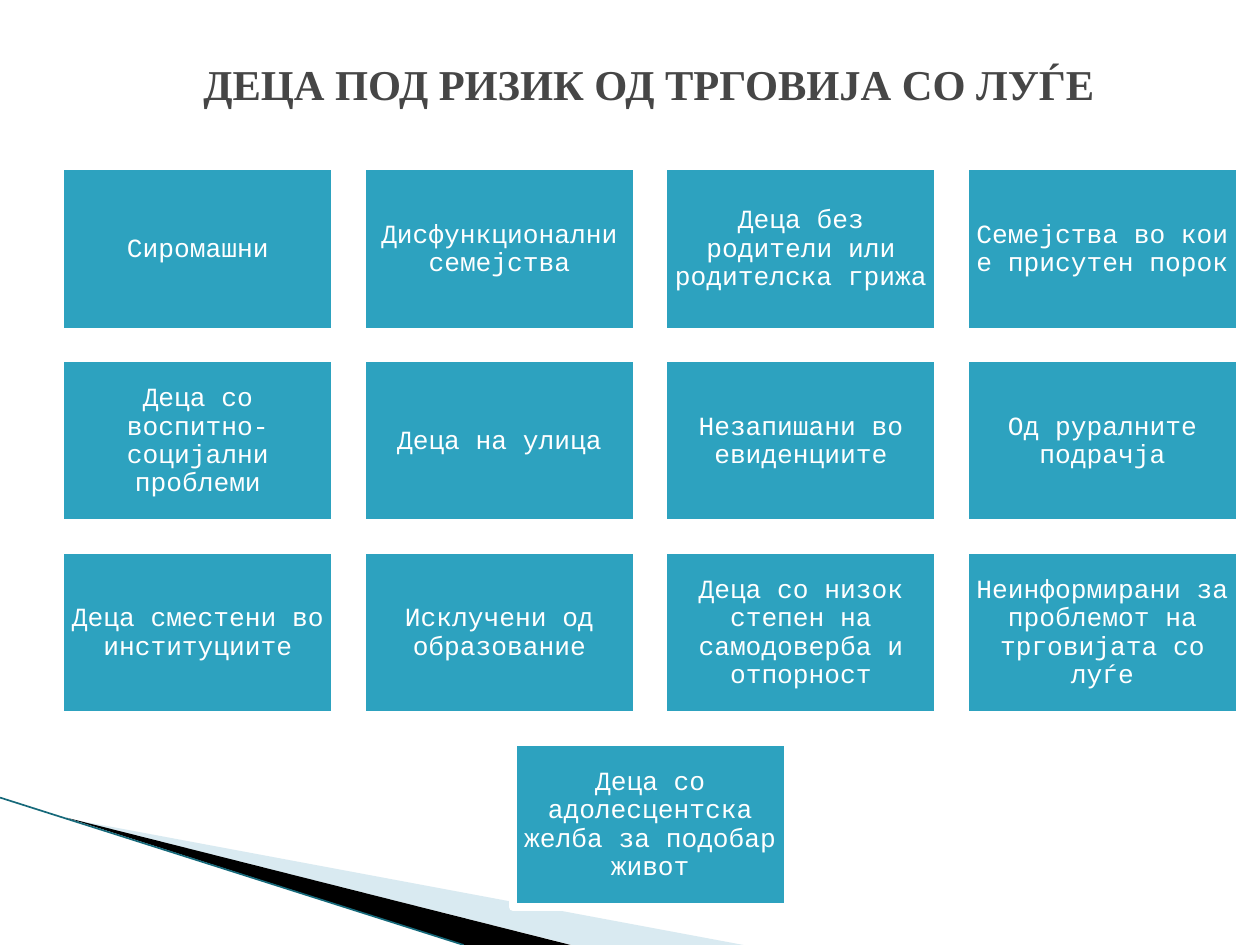
from pptx import Presentation
from pptx.dml.color import RGBColor
from pptx.enum import shapes, text
from pptx.oxml.ns import qn
from pptx.util import Inches, Pt
from lxml import etree

TITLE = "ДЕЦА ПОД РИЗИК ОД ТРГОВИЈА СО ЛУЃЕ"
RISK_ROWS = [
    ["Сиромашни", "Дисфункционални семејства",
     "Деца без родители или родителска грижа",
     "Семејства во кои е присутен порок"],
    ["Деца со воспитно-социјални проблеми", "Деца на улица",
     "Незапишани во евиденциите", "Од руралните подрачја"],
    ["Деца сместени во институциите", "Исклучени од образование",
     "Деца со низок степен на самодоверба и отпорност",
     "Неинформирани за проблемот на трговијата со луѓе"],
    ["Деца со адолесцентска желба за подобар живот"],
]

WHITE = RGBColor(0xFF, 0xFF, 0xFF)
BLACK = RGBColor(0, 0, 0)
GRAY = RGBColor(0x46, 0x46, 0x46)
TEAL = RGBColor(0x2D, 0xA2, 0xBF)
DARK_TEAL = RGBColor(0x16, 0x69, 0x7A)
PALE_BLUE = RGBColor(0xA0, 0xCB, 0xDC)

# Corner wedges: points in inches, fill colour, opacity in percent
WEDGES = [
    ([(0.55, 6.5), (5.9, 7.5), (4.54, 7.5)], PALE_BLUE, 40),
    ([(0.53, 6.49), (4.53, 7.5), (3.68, 7.5)], BLACK, 100),
]
EDGE = [(0, 6.33), (3.68, 7.5)]

GRID_CENTER, GRID_TOP = 5.16, 1.32
BOX_WIDTH, BOX_HEIGHT = 2.18, 1.31
STEP_X, STEP_Y = 2.393, 1.523


def format_with(target, values):
    for name, value in values.items():
        setattr(target, name, value)


def add_wedge(page, points, color, opacity):
    corners = [(Inches(x), Inches(y)) for x, y in points]
    builder = page.shapes.build_freeform(*corners[0])
    builder.add_line_segments(corners[1:], close=True)
    wedge = builder.convert_to_shape()
    wedge.shadow.inherit = False
    wedge.fill.solid()
    wedge.fill.fore_color.rgb = color
    wedge.line.fill.background()
    if opacity < 100:
        fill_color = wedge._element.spPr.find(".//" + qn("a:srgbClr"))
        etree.SubElement(fill_color, qn("a:alpha"), val=str(opacity * 1000))


def add_edge(page):
    ends = [Inches(value) for point in EDGE for value in point]
    edge = page.shapes.add_connector(shapes.MSO_CONNECTOR.STRAIGHT, *ends)
    edge.line.color.rgb = DARK_TEAL
    edge.line.width = Pt(0.95)
    etree.SubElement(edge._element.spPr, qn("a:effectLst"))


def write(frame, wording, frame_format, para_format, font_format, color):
    format_with(frame, frame_format)
    frame.text = wording
    para = frame.paragraphs[0]
    format_with(para, para_format)
    format_with(para.font, font_format)
    para.font.color.rgb = color


def add_risk(page, wording, left, top):
    box = page.shapes.add_shape(
        shapes.MSO_SHAPE.RECTANGLE, Inches(left), Inches(top),
        Inches(BOX_WIDTH), Inches(BOX_HEIGHT))
    box.shadow.inherit = False
    box.fill.solid()
    box.fill.fore_color.rgb = TEAL
    box.line.color.rgb = WHITE
    box.line.width = Pt(4.33)
    margins = dict.fromkeys(
        ["margin_left", "margin_top", "margin_right", "margin_bottom"],
        Inches(0.06))
    write(box.text_frame, wording,
          {"word_wrap": True, "vertical_anchor": text.MSO_ANCHOR.MIDDLE,
           **margins},
          {"alignment": text.PP_ALIGN.CENTER, "line_spacing": 0.9},
          {"name": "Courier New", "size": Pt(15)}, WHITE)


def main():
    deck = Presentation()
    deck.slide_width, deck.slide_height = Inches(10), Inches(7.5)
    page = deck.slides.add_slide(deck.slide_layouts[5])

    for wedge in WEDGES:
        add_wedge(page, *wedge)
    add_edge(page)

    for row, risks in enumerate(RISK_ROWS):
        row_width = (len(risks) - 1) * STEP_X + BOX_WIDTH
        for column, risk in enumerate(risks):
            add_risk(page, risk,
                     GRID_CENTER - row_width / 2 + column * STEP_X,
                     GRID_TOP + row * STEP_Y)

    title = page.shapes.title
    format_with(title, {"left": Inches(0.65), "top": Inches(0.4),
                        "width": Inches(9), "height": Inches(0.53)})
    write(title.text_frame, TITLE,
          {"word_wrap": True, "auto_size": text.MSO_AUTO_SIZE.NONE,
           "vertical_anchor": text.MSO_ANCHOR.MIDDLE},
          {"alignment": text.PP_ALIGN.CENTER},
          {"name": "Times New Roman", "size": Pt(24.3), "bold": True}, GRAY)

    deck.save("out.pptx")


if __name__ == "__main__":
    main()
